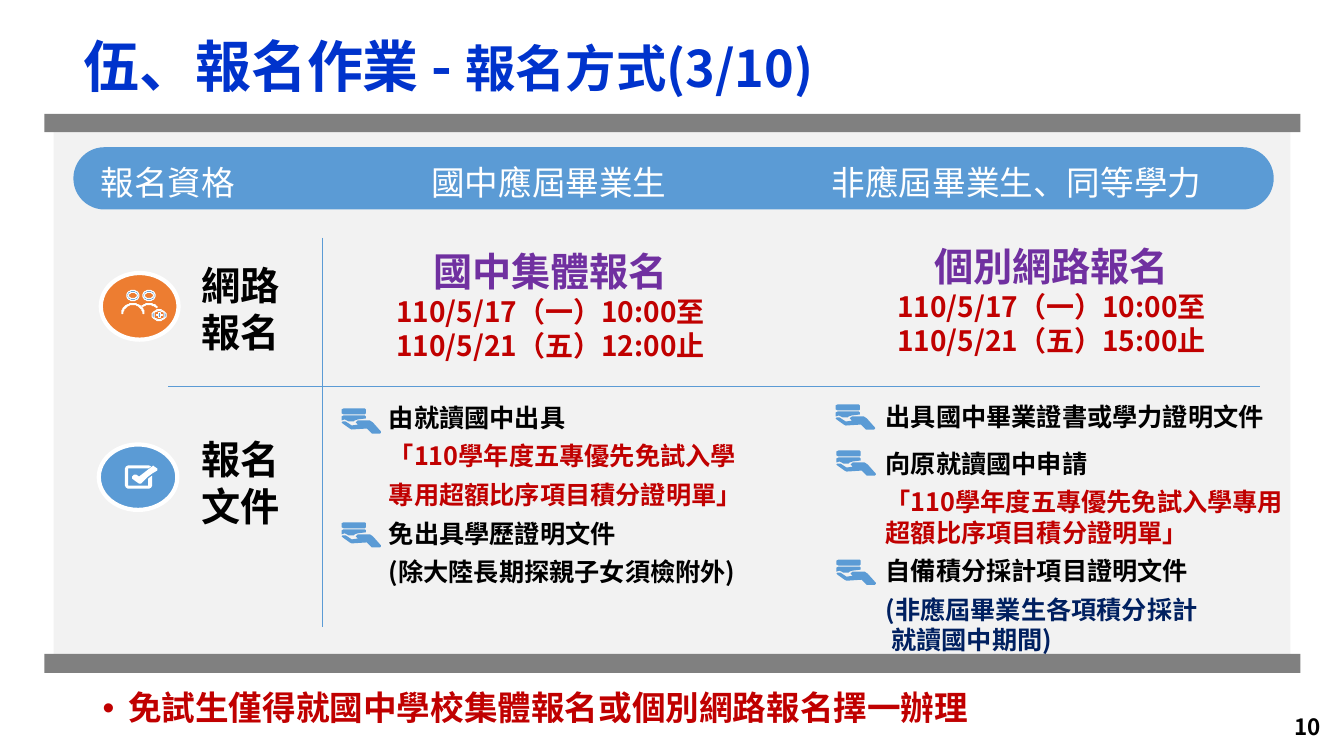
from dataclasses import dataclass
from math import cos, radians, sin
from typing import Any, NamedTuple

from lxml import etree
from pptx import Presentation
from pptx import util as u
from pptx.dml.color import RGBColor
from pptx.enum import shapes, text
from pptx.oxml.ns import qn

FONT = "Noto Sans CJK SC"
BLACK, WHITE, RED, PURPLE = "000000", "FFFFFF", "C00000", "7030A0"
BLUE, ORANGE, GRAY, PALE, NAVY, TITLE_BLUE = "5B9BD5", "ED7D31", "808080", "F2F2F2", "002060", "0033CC"
LEFT, CENTER, RIGHT, JUSTIFY = (text.PP_ALIGN.LEFT, text.PP_ALIGN.CENTER,
                                text.PP_ALIGN.RIGHT, text.PP_ALIGN.JUSTIFY)
TOP, MIDDLE, BOTTOM = text.MSO_ANCHOR.TOP, text.MSO_ANCHOR.MIDDLE, text.MSO_ANCHOR.BOTTOM
RECT, OVAL, PILL = (shapes.MSO_SHAPE.RECTANGLE, shapes.MSO_SHAPE.OVAL,
                    shapes.MSO_SHAPE.ROUNDED_RECTANGLE)
Outline = list[tuple[float, float]]


class Box(NamedTuple):
    left: float
    top: float
    width: float
    height: float


@dataclass
class Line:
    words: str
    size: float
    color: str = BLACK
    bold: bool = True
    align: Any = LEFT
    before: float = 0
    after: float = 0
    spacing: float = 1.0
    tail: str = ""
    tail_size: float = 0
    bullet: bool = False
    tabs: tuple[float, ...] = ()


@dataclass
class Passage:
    box: Box
    lines: list[Line]
    anchor: Any = TOP


@dataclass
class Icon:
    left: float
    top: float
    outlines: list[Outline]
    fill: str = BLUE
    edge: str = ""


def rgb(color: str) -> RGBColor:
    return RGBColor.from_string(color)


def apply(target: Any, formats: dict[str, Any]) -> None:
    for name, value in formats.items():
        setattr(target, name, value)


def paint(shape: Any, fill: str, edge: str = "", edge_width: float = 0) -> None:
    shape.shadow.inherit = False
    shape.fill.solid()
    shape.fill.fore_color.rgb = rgb(fill)
    if edge:
        shape.line.color.rgb = rgb(edge)
        shape.line.width = u.Pt(edge_width)
    else:
        shape.line.fill.background()


def draw_shape(slide: Any, kind: Any, box: Box, fill: str, edge: str = "", edge_width: float = 0) -> Any:
    shape = slide.shapes.add_shape(kind, *map(u.Cm, box))
    paint(shape, fill, edge, edge_width)
    return shape


def draw_rule(slide: Any, x1: float, y1: float, x2: float, y2: float) -> None:
    rule = slide.shapes.add_connector(shapes.MSO_CONNECTOR.STRAIGHT, *map(u.Cm, (x1, y1, x2, y2)))
    apply(rule.line, {"width": u.Pt(0.25)})
    rule.line.color.rgb = rgb(BLUE)
    etree.SubElement(rule._element.spPr, qn("a:effectLst"))


def draw_icon(slide: Any, icon: Icon) -> None:
    first, *others = icon.outlines
    builder = slide.shapes.build_freeform(*first[0], scale=u.Cm(0.0254))
    builder.add_line_segments(first[1:], close=True)
    for outline in others:
        builder.move_to(*outline[0])
        builder.add_line_segments(outline[1:], close=True)
    paint(builder.convert_to_shape(u.Cm(icon.left), u.Cm(icon.top)), icon.fill, icon.edge, 0.75)


def write_run(paragraph: Any, words: str, line: Line, size: float) -> None:
    run = paragraph.add_run()
    run.text = words
    apply(run.font, {"name": FONT, "size": u.Pt(size), "bold": line.bold})
    run.font.color.rgb = rgb(line.color)
    etree.SubElement(run._r.get_or_add_rPr(), qn("a:ea"), typeface=FONT)


def write(frame: Any, lines: list[Line], anchor: Any) -> None:
    apply(frame, {"word_wrap": True, "vertical_anchor": anchor})
    for index, line in enumerate(lines):
        paragraph = frame.paragraphs[0] if index == 0 else frame.add_paragraph()
        formats = {"alignment": line.align, "line_spacing": line.spacing, "space_after": u.Pt(line.after)}
        if index:
            formats["space_before"] = u.Pt(line.before)
        apply(paragraph, formats)
        properties = paragraph._p.get_or_add_pPr()
        if line.bullet:
            properties.set("marL", str(u.Cm(0.64)))
            properties.set("indent", str(u.Cm(-0.64)))
            etree.SubElement(properties, qn("a:buFont"), typeface="Arial")
            etree.SubElement(properties, qn("a:buChar"), char="•")
        if line.tabs:
            stops = etree.SubElement(properties, qn("a:tabLst"))
            for stop in line.tabs:
                etree.SubElement(stops, qn("a:tab"), pos=str(u.Cm(stop)), algn="l")
        for number, part in enumerate(line.words.split("\n")):
            if number:
                paragraph.add_line_break()
            write_run(paragraph, part, line, line.size)
        if line.tail:
            write_run(paragraph, line.tail, line, line.tail_size)


def arc(x: float, y: float, rx: float, ry: float, start: int = 0, end: int = 360) -> Outline:
    step = (end - start) / 24
    angles = [radians(start + step * i) for i in range(25)]
    return [(round(x + rx * cos(a), 2), round(y + ry * sin(a), 2)) for a in angles]


def band(x: float, start: int, end: int) -> Outline:
    return arc(x, 23, 11, 10, start, end) + arc(x, 23, 10, 9, start, end)[::-1]


HAND = [
    [(25, 12), (28, 12.5), (31, 14), (39, 23), (39, 24.5), (38, 25), (30, 25), (29, 24.5), (25, 20),
     (10, 21), (8, 20), (1, 15), (0, 14), (1, 13), (4, 13), (10, 17), (24, 15), (16, 16), (14, 14), (16, 12)],
    [(2, 7), (23, 7), (24, 8), (24, 10), (16, 11), (13, 12), (12, 13), (7, 13), (5, 12), (3, 11), (0, 12), (0, 8)],
    [(2, 0), (23, 0), (24, 1), (24, 5), (23, 6), (2, 6), (0, 5), (0, 1)],
]
CHECKBOX = [
    [(28, 0), (29, 1), (32, 3), (32, 5), (27, 8), (23, 11), (18, 16), (16, 18), (14, 18), (11, 16),
     (7, 13), (7, 11), (9, 9), (11, 9), (14, 11), (23, 4), (27, 1)],
    [(3, 0), (24, 0), (26, 1), (23, 3), (3, 3), (3, 20), (23, 20), (23, 13), (27, 10), (27, 20),
     (26, 22), (24, 23), (3, 23), (1, 22), (0, 20), (0, 3), (1, 1)],
]
PLUS = [(36, 22), (38, 22), (38, 24), (40, 24), (40, 25), (38, 25), (38, 27), (36, 27), (36, 25),
        (34, 25), (34, 24), (36, 24)]
HEADS = [arc(x, 5, rx, ry) for x in (11, 27) for rx, ry in ((6, 5), (4.5, 3.5))]
PEOPLE = [PLUS, arc(37, 24.5, 7, 5.5), arc(37, 24.5, 5.5, 4.5), band(11, 180, 360), band(27, 230, 320), *HEADS]

ICONS = [Icon(3.15, 11.73, CHECKBOX, WHITE), Icon(3.07, 7.32, PEOPLE, BLUE, WHITE)] + [
    Icon(left, top, HAND) for left, top in
    ((8.61, 10.29), (8.61, 13.16), (21.06, 10.19), (21.08, 11.35), (21.08, 14.1))]

PASSAGES = [
    Passage(Box(1.85, 0.84, 29.21, 1.83),
            [Line("伍、報名作業 - ", 40, TITLE_BLUE, spacing=0.9, tail="報名方式(3/10)", tail_size=36)], MIDDLE),
    Passage(Box(2.34, 17.3, 23.04, 1.04),
            [Line("免試生僅得就國中學校集體報名或個別網路報名擇一辦理", 24, RED, spacing=0.9, bullet=True)]),
    Passage(Box(4.83, 6.48, 3.3, 2.59), [Line("網路", 28), Line("報名", 28)], BOTTOM),
    Passage(Box(4.83, 11, 3.3, 2.46), [Line("報名", 28), Line("文件", 28)], BOTTOM),
    Passage(Box(8.86, 5.94, 10.03, 3.3),
            [Line("國中集體報名", 28, PURPLE, align=CENTER),
             Line("110/5/17（一）10:00至", 20, RED, align=CENTER),
             Line("110/5/21（五）12:00止", 20, RED, align=CENTER)], BOTTOM),
    Passage(Box(21.23, 5.99, 10.54, 3.15),
            [Line("個別網路報名", 28, PURPLE, align=CENTER),
             Line("110/5/17（一）10:00至", 20, RED, align=CENTER),
             Line("110/5/21（五）15:00止", 20, RED, align=CENTER)]),
    Passage(Box(9.55, 10.08, 9.7, 4.83),
            [Line(words, 18, color, align=align, before=3, after=3) for words, color, align in (
                ("由就讀國中出具", BLACK, JUSTIFY), ("「110學年度五專優先免試入學", RED, JUSTIFY),
                ("專用超額比序項目積分證明單」", RED, JUSTIFY), ("免出具學歷證明文件", BLACK, LEFT),
                ("(除大陸長期探親子女須檢附外)", BLACK, LEFT))], BOTTOM),
    Passage(Box(22.07, 9.98, 10.67, 6.71),
            [Line(words, 18, color, before=before) for words, color, before in (
                ("出具國中畢業證書或學力證明文件", BLACK, 0), ("向原就讀國中申請", BLACK, 12),
                ("「110學年度五專優先免試入學專用超額比序項目積分證明單」", RED, 6),
                ("自備積分採計項目證明文件", BLACK, 6),
                ("(非應屆畢業生各項積分採計\n 就讀國中期間)", NAVY, 6))]),
    Passage(Box(25.91, 17.81, 7.62, 1.02), [Line("10", 16, align=RIGHT)], MIDDLE),
]


def main() -> None:
    deck = Presentation()
    apply(deck, {"slide_width": u.Cm(33.87), "slide_height": u.Cm(19.05)})
    slide = deck.slides.add_slide(deck.slide_layouts[6])
    draw_shape(slide, RECT, Box(1.35, 3.15, 31.17, 13.34), PALE)
    for top, height in ((2.87, 0.46), (16.48, 0.48)):
        draw_shape(slide, RECT, Box(1.12, top, 31.65, height), GRAY)
    draw_rule(slide, 4.24, 9.73, 31.75, 9.73)
    draw_rule(slide, 8.13, 5.99, 8.13, 15.8)
    draw_shape(slide, OVAL, Box(2.49, 11.2, 1.98, 1.65), BLUE, WHITE, 3)
    draw_shape(slide, OVAL, Box(2.54, 6.88, 1.96, 1.68), ORANGE, WHITE, 3)
    header = draw_shape(slide, PILL, Box(1.85, 3.71, 30.25, 1.57), BLUE)
    header.adjustments[0] = 0.5
    header.text_frame.margin_left = u.Cm(0.46)
    write(header.text_frame, [Line("報名資格\t國中應屆畢業生\t非應屆畢業生、同等學力", 24, WHITE,
                                   bold=False, spacing=1.2, tabs=(8.33, 18.42))], MIDDLE)
    for icon in ICONS:
        draw_icon(slide, icon)
    for passage in PASSAGES:
        write(slide.shapes.add_textbox(*map(u.Cm, passage.box)).text_frame, passage.lines, passage.anchor)
    deck.save("out.pptx")


if __name__ == "__main__":
    main()
